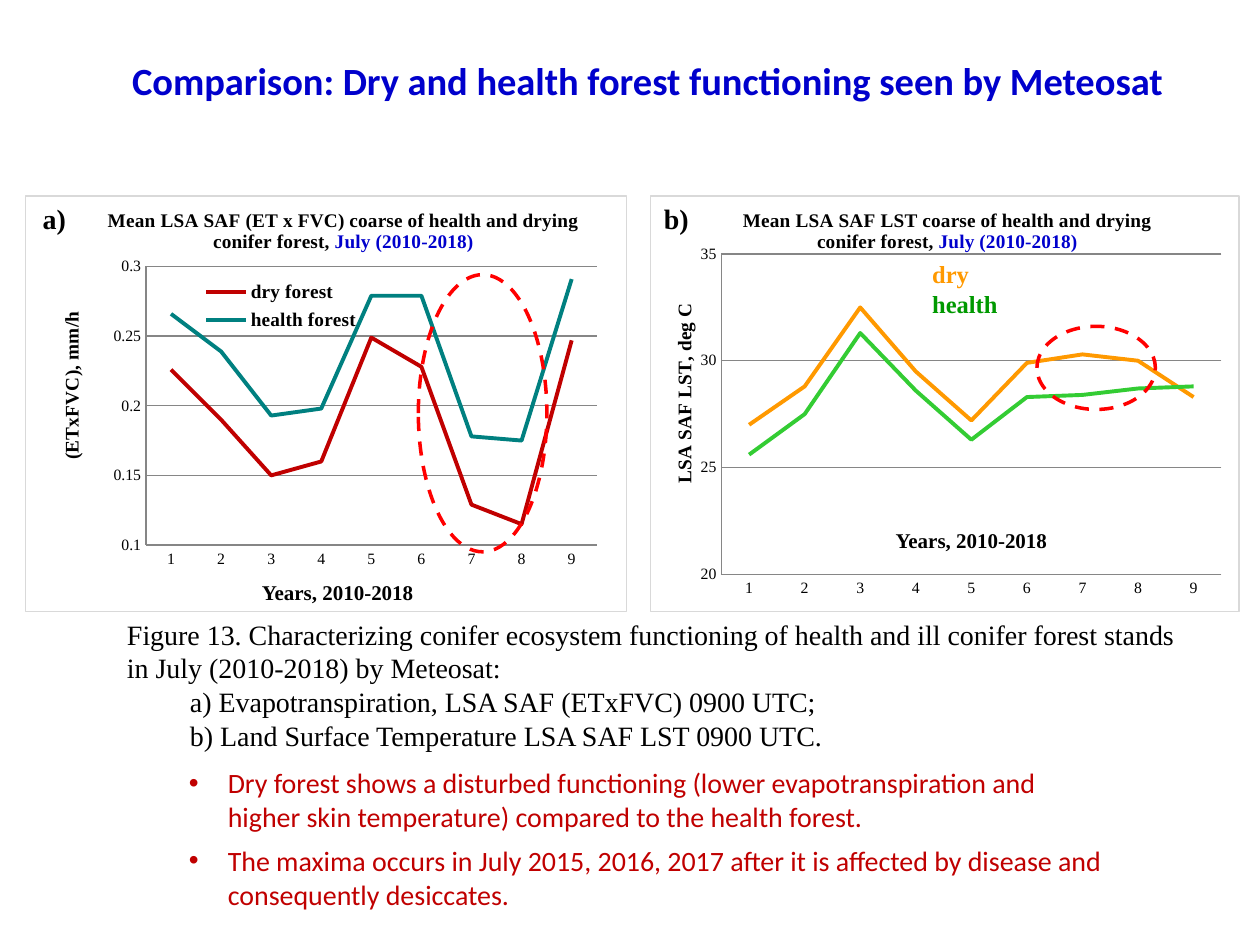
from dataclasses import dataclass

from lxml.etree import SubElement
from pptx import Presentation
from pptx.chart.data import CategoryChartData
from pptx.dml.color import RGBColor
from pptx.enum.chart import XL_CHART_TYPE, XL_LEGEND_POSITION, XL_TICK_MARK
from pptx.enum.dml import MSO_LINE
from pptx.enum.shapes import MSO_SHAPE
from pptx.enum.text import MSO_ANCHOR, MSO_AUTO_SIZE, PP_ALIGN
from pptx.oxml import parse_xml
from pptx.oxml.ns import nsdecls, qn
from pptx.util import Inches, Pt


@dataclass(frozen=True)
class Theme:
    serif: str = "Times New Roman"
    sans: str = "Calibri"
    black: str = "000000"
    blue: str = "0000CC"
    red: str = "FF0000"
    dark_red: str = "C00000"
    teal: str = "008080"
    orange: str = "FF9900"
    green: str = "33CC33"
    dark_green: str = "009900"
    grid: str = "868686"
    border: str = "D9D9D9"
    heading: int = 22
    body: int = 16
    key: int = 14
    note: int = 12
    chart_title: int = 11
    chart_text: int = 10
    tick: int = 9


theme = Theme()


def style(font, name, size, color, bold=False):
    values = {"name": name, "size": Pt(size), "bold": bold}
    for attribute, value in values.items():
        setattr(font, attribute, value)
    font.color.rgb = RGBColor.from_string(color)


def place(element, index, **fractions):
    """Give a chart part a manual layout, in fractions of the chart."""
    for old in element.findall(qn("c:layout")):
        element.remove(old)
    layout = parse_xml(f"<c:layout {nsdecls('c')}><c:manualLayout/></c:layout>")
    manual = layout[0]
    if element.tag == qn("c:plotArea"):
        SubElement(manual, qn("c:layoutTarget")).set("val", "inner")
    for side in ("x", "y"):
        SubElement(manual, qn(f"c:{side}Mode")).set("val", "edge")
    for side, value in fractions.items():
        SubElement(manual, qn(f"c:{side}")).set("val", str(value))
    element.insert(index, layout)


deck = Presentation()
deck.slide_width, deck.slide_height = Inches(10), Inches(7.5)
page = deck.slides.add_slide(deck.slide_layouts[6])

# Charts, each with an ellipse around the years of disturbance
charts = [
    {
        "left": 0.2, "width": 4.78,
        "title": "Mean LSA SAF (ET x FVC) coarse of health and drying conifer forest, ",
        "title_at": {"x": 0.13, "y": 0.02},
        "axis_title": "(ETxFVC), mm/h", "axis_title_at": {"x": 0.05, "y": 0.27},
        "scale": {"minimum_scale": 0.1, "maximum_scale": 0.3, "major_unit": 0.05},
        "plot": {"x": 0.2, "y": 0.17, "w": 0.75, "h": 0.67},
        "legend": {"x": 0.29, "y": 0.19, "w": 0.27, "h": 0.15},
        "series": [
            ("dry forest", theme.dark_red,
             [0.226, 0.19, 0.15, 0.16, 0.249, 0.228, 0.129, 0.115, 0.247]),
            ("health forest", theme.teal,
             [0.266, 0.239, 0.193, 0.198, 0.279, 0.279, 0.178, 0.175, 0.291]),
        ],
        "ellipse": (3.32, 2.18, 1.02, 2.2),
    },
    {
        "left": 5.16, "width": 4.68,
        "title": "Mean LSA SAF LST coarse of health and drying conifer forest, ",
        "title_at": {"x": 0.15, "y": 0.02},
        "axis_title": "LSA SAF LST, deg C", "axis_title_at": {"x": 0.03, "y": 0.25},
        "scale": {"minimum_scale": 20, "maximum_scale": 35, "major_unit": 5},
        "plot": {"x": 0.12, "y": 0.14, "w": 0.85, "h": 0.77},
        "legend": None,
        "series": [
            ("Series 1", theme.orange, [27, 28.8, 32.5, 29.5, 27.2, 29.9, 30.3, 30, 28.3]),
            ("Series 2", theme.green, [25.6, 27.5, 31.3, 28.6, 26.3, 28.3, 28.4, 28.7, 28.8]),
        ],
        "ellipse": (8.23, 2.59, 0.94, 0.66),
    },
]

for item in charts:
    data = CategoryChartData()
    data.categories = [str(year) for year in range(1, 10)]
    for name, _, values in item["series"]:
        data.add_series(name, values)
    chart = page.shapes.add_chart(
        XL_CHART_TYPE.LINE, Inches(item["left"]), Inches(1.55),
        Inches(item["width"]), Inches(3.31), data).chart
    style(chart.font, theme.serif, theme.chart_text, theme.black)
    border = parse_xml(
        f'<c:spPr {nsdecls("c", "a")}><a:noFill/><a:ln w="9525"><a:solidFill>'
        f'<a:srgbClr val="{theme.border}"/></a:solidFill></a:ln></c:spPr>')
    chart.element.find(qn("c:txPr")).addprevious(border)

    chart.has_title = True
    para = chart.chart_title.text_frame.paragraphs[0]
    for text, color in ((item["title"], theme.black), ("July (2010-2018)", theme.blue)):
        span = para.add_run()
        span.text = text
        style(span.font, theme.serif, theme.chart_title, color, bold=True)
    place(chart.chart_title.element if hasattr(chart.chart_title, "element")
          else chart.element.find(".//" + qn("c:title")), 1, **item["title_at"])
    place(chart.element.find(".//" + qn("c:plotArea")), 0, **item["plot"])

    chart.has_legend = item["legend"] is not None
    if chart.has_legend:
        chart.legend.position = XL_LEGEND_POSITION.RIGHT
        chart.legend.include_in_layout = True
        style(chart.legend.font, theme.serif, theme.chart_title, theme.black, bold=True)
        place(chart.element.find(".//" + qn("c:legend")), 1, **item["legend"])

    value_axis = chart.value_axis
    for attribute, value in item["scale"].items():
        setattr(value_axis, attribute, value)
    value_axis.has_major_gridlines = True
    for axis in (chart.category_axis, value_axis):
        axis.major_tick_mark = axis.minor_tick_mark = XL_TICK_MARK.NONE
        style(axis.tick_labels.font, theme.serif, theme.tick, theme.black)
    for line in (chart.category_axis.format.line, value_axis.format.line,
                 value_axis.major_gridlines.format.line):
        line.color.rgb = RGBColor.from_string(theme.grid)
        line.width = Pt(0.75)
    span = value_axis.axis_title.text_frame.paragraphs[0].add_run()
    span.text = item["axis_title"]
    style(span.font, theme.serif, theme.chart_title, theme.black, bold=True)
    place(chart.element.find(".//" + qn("c:valAx")).find(qn("c:title")), 1,
          **item["axis_title_at"])

    chart.plots[0].vary_by_categories = False
    for series, (_, color, _) in zip(chart.plots[0].series, item["series"]):
        series.smooth = False
        series.format.line.color.rgb = RGBColor.from_string(color)
        series.format.line.width = Pt(2.25)

    ellipse = page.shapes.add_shape(MSO_SHAPE.OVAL, *map(Inches, item["ellipse"]))
    ellipse.shadow.inherit = False
    ellipse.fill.background()
    ellipse.line.color.rgb = RGBColor.from_string(theme.red)
    ellipse.line.width = Pt(2)
    ellipse.line.dash_style = MSO_LINE.DASH

# Text: position, wrap, font, size, bold, paragraphs of (text, colour) runs, paragraph kinds
label = (theme.serif, theme.note, True, [[("Years, 2010-2018", theme.black)]], ["plain"])
caption = [
    "Figure 13. Characterizing conifer ecosystem functioning of health and ill conifer "
    "forest stands in July (2010-2018) by Meteosat:",
    "a) Evapotranspiration, LSA SAF (ETxFVC) 0900 UTC;",
    "b) Land Surface Temperature LSA SAF LST 0900 UTC.",
]
findings = [
    "Dry forest shows a disturbed functioning (lower evapotranspiration and higher skin "
    "temperature) compared to the health forest.",
    "The maxima occurs in July 2015, 2016, 2017 after it is affected by disease and "
    "consequently desiccates.",
]
texts = [
    ((0.89, 0.01, 8.5, 1.25), True, theme.sans, theme.heading, True,
     [[("Comparison: Dry and health forest functioning seen by Meteosat", theme.blue)]],
     ["title"]),
    ((0.91, 4.85, 8.74, 1.18), True, theme.serif, theme.body, False,
     [[(line, theme.black)] for line in caption], ["plain", "indent", "indent"]),
    ((1.98, 4.55, 1.42, 0.3), False, *label),
    ((7.01, 4.14, 1.42, 0.3), False, *label),
    ((7.3, 2.01, 0.93, 0.57), True, theme.serif, theme.key, True,
     [[("dry ", theme.orange), ("health", theme.dark_green)]], ["plain"]),
    ((0.24, 1.55, 0.39, 0.37), False, theme.serif, theme.body, True,
     [[("a)", theme.black)]], ["plain"]),
    ((5.17, 1.55, 0.4, 0.37), False, theme.serif, theme.body, True,
     [[("b)", theme.black)]], ["plain"]),
    ((1.4, 6.03, 7.48, 1.26), True, theme.sans, theme.body, False,
     [[(line, theme.dark_red)] for line in findings], ["bullet", "bullet"]),
]
margins = {"indent": (0.5, 0), "bullet": (0.31, -0.31)}

for position, wrap, font, size, bold, paragraphs, kinds in texts:
    frame = page.shapes.add_textbox(*map(Inches, position)).text_frame
    frame.word_wrap = wrap
    frame.auto_size = MSO_AUTO_SIZE.SHAPE_TO_FIT_TEXT
    for number, (runs, kind) in enumerate(zip(paragraphs, kinds)):
        para = frame.add_paragraph() if number else frame.paragraphs[0]
        if kind in margins:
            properties = para._p.get_or_add_pPr()
            for attribute, value in zip(("marL", "indent"), margins[kind]):
                properties.set(attribute, str(Inches(value)))
        if kind == "bullet":
            SubElement(properties, qn("a:buFont")).set("typeface", "Arial")
            SubElement(properties, qn("a:buChar")).set("char", "•")
            if number:
                para.space_before = Pt(6)
        if kind == "title":
            para.alignment = PP_ALIGN.CENTER
            frame.auto_size = MSO_AUTO_SIZE.NONE
            frame.vertical_anchor = MSO_ANCHOR.MIDDLE
        for text, color in runs:
            span = para.add_run()
            span.text = text
            style(span.font, font, size, color, bold)

deck.save("out.pptx")
